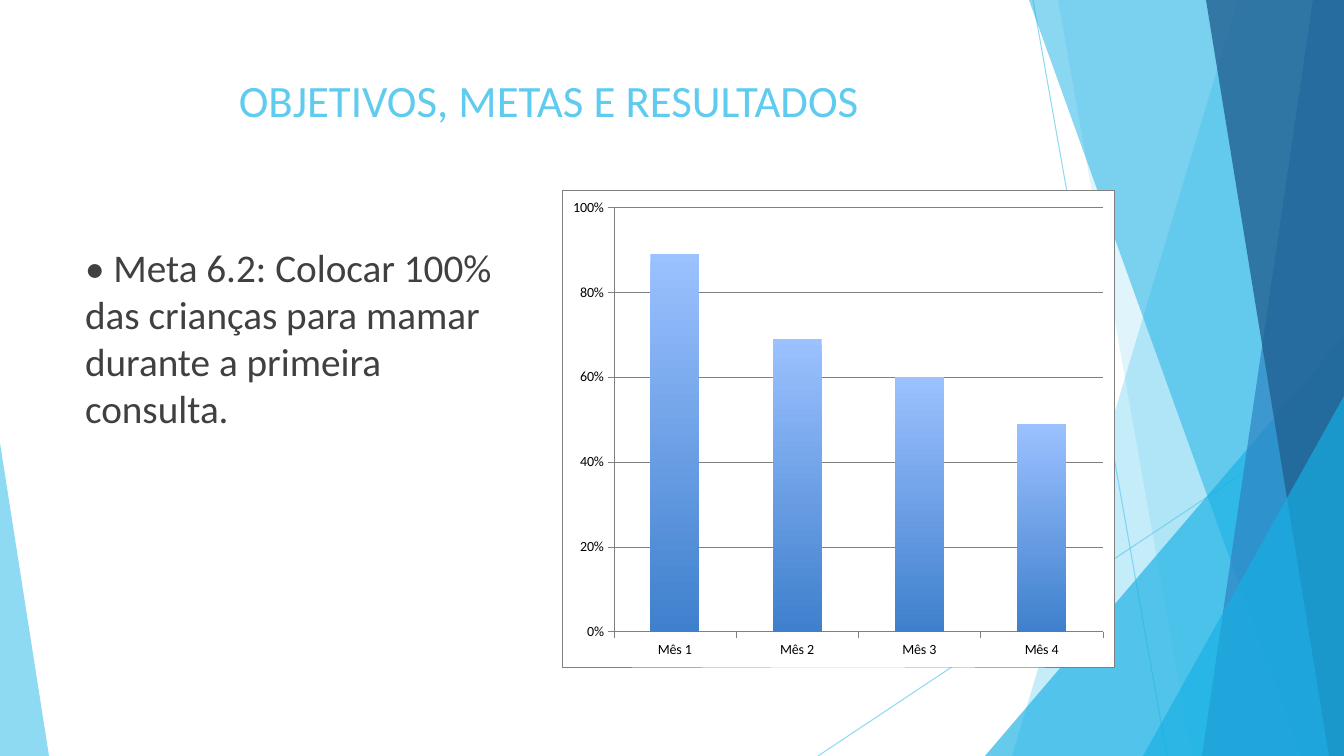
from lxml.etree import SubElement, fromstring
from pptx import Presentation
from pptx.chart.data import CategoryChartData
from pptx.dml.color import RGBColor
from pptx.enum.chart import XL_CHART_TYPE as CT, XL_TICK_MARK as TICK
from pptx.enum.shapes import MSO_CONNECTOR as CONN, MSO_SHAPE as SHAPE
from pptx.enum.text import MSO_ANCHOR as ANCHOR, MSO_AUTO_SIZE as AUTO, PP_ALIGN as ALIGN
from pptx.oxml.ns import nsdecls, qn
from pptx.util import Pt

SCALE = 914400 / 100.8
W, H = 1344, 756
FONT = "Calibri"
COLORS = {
    "sky": "5FCBEF", "cyan": "17B0E4", "blue": "2E83C3", "navy": "226292",
    "text": "404040", "black": "000000", "grey": "808080", "white": "FFFFFF",
    "bar_top": "9BC1FF", "bar_bottom": "3F80CD",
}


def px(*lengths):
    return [round(n * SCALE) for n in lengths]


def paint(color_format, name, alpha=100):
    color_format.rgb = RGBColor.from_string(COLORS[name])
    if alpha < 100:
        for clr in color_format._xFill.iter(qn("a:srgbClr")):
            SubElement(clr, qn("a:alpha"), val=str(alpha * 1000))


prs = Presentation()
prs.slide_width, prs.slide_height = px(W, H)
s = prs.slides.add_slide(prs.slide_layouts[1])
title, body = s.placeholders

for x1, y1, x2, y2 in [(1033, 0, 1167, H), (W, 406, 818, H)]:
    line = s.shapes.add_connector(CONN.STRAIGHT, *px(x1, y1, x2, y2))
    line.line.width = Pt(0.75)
    paint(line.line.color, "sky", 70)
    SubElement(line.element.spPr, qn("a:effectLst"))

panels = [
    ("strip", 1238, 1012, "sky", 36),
    ("strip", 1058, 1192, "sky", 20),
    ("right", 985, 336, "cyan", 66),
    ("strip", 1029, 1301, "cyan", 50),
    ("strip", 1313, 1202, "blue", 70),
    ("strip", 1206, 1329, "navy", 80),
    ("right", 1143, 396, "cyan", 66),
    ("left", 49, 443, "sky", 70),
]
for kind, a, b, color, alpha in panels:
    if kind == "strip":
        outline = s.shapes.build_freeform(a, 0, scale=SCALE)
        outline.add_line_segments([(W, 0), (W, H), (b, H)], close=True)
        sp = outline.convert_to_shape()
    else:
        left, width = (a, W - a) if kind == "right" else (0, a)
        sp = s.shapes.add_shape(SHAPE.ISOSCELES_TRIANGLE, *px(left, b, width, H - b))
        sp.adjustments[0] = 1 if kind == "right" else 0
    sp.shadow.inherit = False
    sp.line.fill.background()
    sp.fill.solid()
    paint(sp.fill.fore_color, color, alpha)

texts = [
    (title, (75, 68, 948, 145), "OBJETIVOS, METAS E RESULTADOS", 32, "sky", ALIGN.CENTER),
    (body, (75, 238, 462, 427),
     "• Meta 6.2: Colocar 100% das crianças para mamar durante a primeira consulta.",
     28, "text", ALIGN.LEFT),
]
for sp, box, text, size, color, align in texts:
    sp.element.getparent().append(sp.element)
    sp.left, sp.top, sp.width, sp.height = px(*box)
    tf = sp.text_frame
    tf.text = text
    tf.word_wrap = True
    tf.auto_size = AUTO.NONE
    tf.vertical_anchor = ANCHOR.TOP
    p = tf.paragraphs[0]
    p.alignment = align
    p.font.name = FONT
    p.font.size = Pt(size)
    paint(p.font.color, color)

p = body.text_frame.paragraphs[0]
p.space_before = Pt(10)
pPr = p._p.get_or_add_pPr()
pPr.set("marL", "0")
pPr.set("indent", "0")
pPr.insert_element_before(fromstring(f"<a:buNone {nsdecls('a')}/>"), "a:defRPr")

data = CategoryChartData(number_format="0%")
data.categories = [f"Mês {n}" for n in range(1, 5)]
data.add_series("Series 1", [0.89, 0.69, 0.6, 0.49])
chart = s.shapes.add_chart(CT.COLUMN_CLUSTERED, *px(562, 190, 552, 477), data).chart
chart.has_legend = False
chart.has_title = False
chart.font.name = FONT
chart.font.size = Pt(10)
paint(chart.font.color, "black")

cat_axis, val_axis = chart.category_axis, chart.value_axis
val_axis.minimum_scale, val_axis.maximum_scale, val_axis.major_unit = 0, 1, 0.2
val_axis.has_major_gridlines = True
val_axis.tick_labels.number_format = "0%"
val_axis.tick_labels.number_format_is_linked = False
for axis in (cat_axis, val_axis):
    axis.major_tick_mark = TICK.OUTSIDE
    axis.minor_tick_mark = TICK.NONE
for part in (cat_axis, val_axis, val_axis.major_gridlines):
    part.format.line.width = Pt(0.25)
    paint(part.format.line.color, "grey")

plot = chart.plots[0]
plot.gap_width = 150
plot.vary_by_categories = False
fill = plot.series[0].format.fill
fill.gradient()
fill.gradient_angle = 270
for stop, position, color in zip(fill.gradient_stops, (0, 1), ("bar_top", "bar_bottom")):
    stop.position = position
    paint(stop.color, color)

white = f'<a:solidFill><a:srgbClr val="{COLORS["white"]}"/></a:solidFill>'
border = f'<a:ln w="3175"><a:solidFill><a:srgbClr val="{COLORS["grey"]}"/></a:solidFill></a:ln>'
frame = chart.element.find(qn("c:chart"))
frame.addnext(fromstring(f"<c:spPr {nsdecls('c', 'a')}>{white}{border}</c:spPr>"))
frame.find(qn("c:plotArea")).append(
    fromstring(f"<c:spPr {nsdecls('c', 'a')}>{white}</c:spPr>"))

prs.save("out.pptx")
